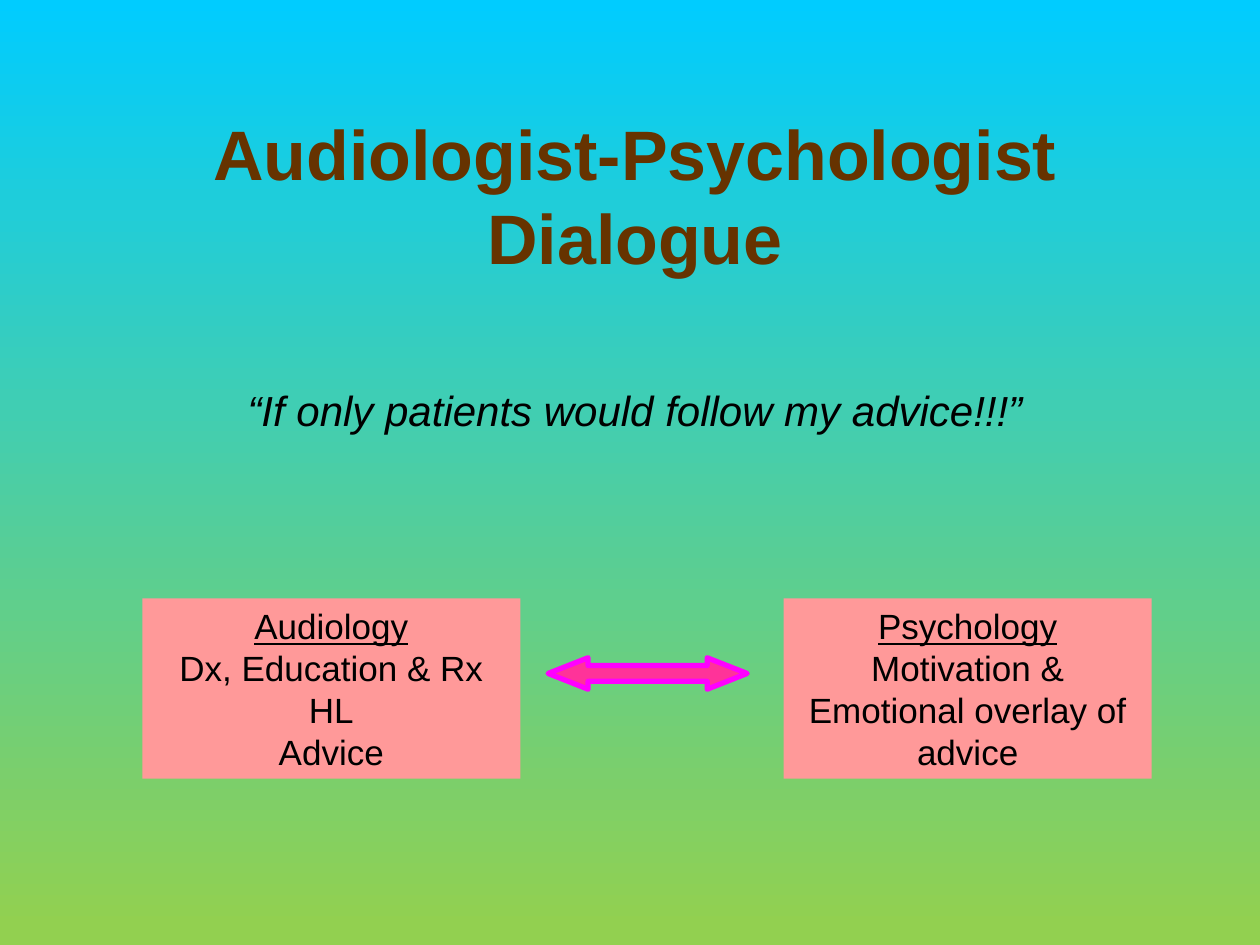
from pptx import Presentation
from pptx.dml.color import RGBColor
from pptx.enum.shapes import MSO_SHAPE
from pptx.enum.text import MSO_ANCHOR, PP_ALIGN
from pptx.util import Inches, Pt

SKY = RGBColor(0x00, 0xCC, 0xFF)
GRASS = RGBColor(0x92, 0xD0, 0x50)
BROWN = RGBColor(0x66, 0x33, 0x00)
BLACK = RGBColor(0x00, 0x00, 0x00)
SALMON = RGBColor(0xFF, 0x99, 0x99)
PINK = RGBColor(0xFF, 0x33, 0x99)
MAGENTA = RGBColor(0xFF, 0x00, 0xFF)

FONT = "Arial"
PANEL_TOP, PANEL_HEIGHT = 4.75, 1.43


def inches(*lengths):
    return [Inches(length) for length in lengths]


def paint_background(page):
    fill = page.background.fill
    fill.gradient()
    fill.gradient_angle = 270  # counter-clockwise, so top to bottom
    for stop, position, color in zip(fill.gradient_stops, (0, 0.98), (SKY, GRASS)):
        stop.position = position
        stop.color.rgb = color


def write_lines(shape, lines, size, color=BLACK, bold=False, italic=False,
                underline_first=False):
    frame = shape.text_frame
    frame.word_wrap = True
    frame.vertical_anchor = MSO_ANCHOR.TOP
    for index, line in enumerate(lines):
        para = frame.add_paragraph() if index else frame.paragraphs[0]
        para.alignment = PP_ALIGN.CENTER
        span = para.add_run()
        span.text = line
        font = span.font
        font.name, font.size = FONT, Pt(size)
        font.bold, font.italic = bold, italic
        font.underline = underline_first and index == 0
        font.color.rgb = color


def add_title(page, text):
    title = page.shapes.title
    title.left, title.top, title.width, title.height = inches(0.83, 0.83, 8.42, 1.43)
    write_lines(title, [text], size=40, color=BROWN, bold=True)


def add_quote(page, text):
    box = page.shapes.add_textbox(*inches(0.79, 3, 8.5, 1.11))
    write_lines(box, [text], size=24, italic=True)


def add_filled_shape(page, kind, left, top, width, height, color):
    shape = page.shapes.add_shape(kind, *inches(left, top, width, height))
    shape.shadow.inherit = False
    shape.fill.solid()
    shape.fill.fore_color.rgb = color
    shape.line.fill.background()
    return shape


def add_panel(page, left, width, lines):
    panel = add_filled_shape(page, MSO_SHAPE.RECTANGLE, left, PANEL_TOP,
                             width, PANEL_HEIGHT, SALMON)
    write_lines(panel, lines, size=20, underline_first=True)


def add_double_arrow(page, left, top, width, height):
    arrow = add_filled_shape(page, MSO_SHAPE.LEFT_RIGHT_ARROW, left, top,
                             width, height, PINK)
    arrow.adjustments[0] = 0.5
    arrow.adjustments[1] = 1.27
    arrow.line.color.rgb = MAGENTA
    arrow.line.width = Pt(3)


def main():
    deck = Presentation()
    deck.slide_width, deck.slide_height = inches(10, 7.5)
    page = deck.slides.add_slide(deck.slide_layouts[5])  # title only
    paint_background(page)

    # Heading
    add_title(page, "Audiologist-Psychologist Dialogue")

    # The two professions and the exchange between them
    add_panel(page, 1.13, 3, ["Audiology", "Dx, Education & Rx HL", "Advice"])
    add_panel(page, 6.22, 2.92,
              ["Psychology", "Motivation &", "Emotional overlay of advice"])
    add_double_arrow(page, 4.35, 5.22, 1.58, 0.25)

    # Quotation
    add_quote(page, "“If only patients would follow my advice!!!”")

    deck.save("out.pptx")


if __name__ == "__main__":
    main()
